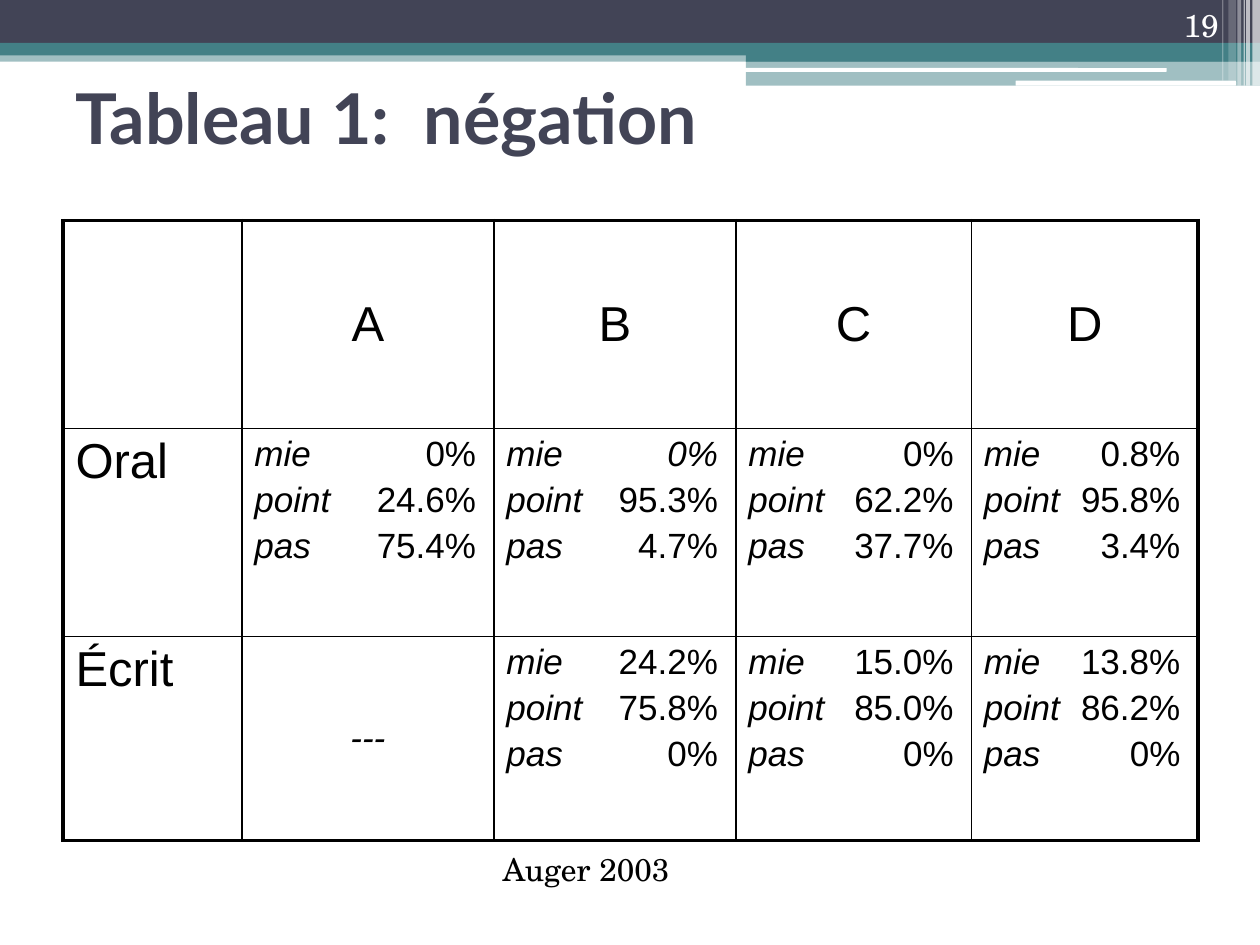
from lxml import etree
from pptx import Presentation
from pptx.dml.color import RGBColor
from pptx.enum.shapes import MSO_SHAPE
from pptx.enum.text import MSO_ANCHOR, PP_ALIGN
from pptx.oxml.ns import qn
from pptx.util import Inches, Pt

NAVY = RGBColor(0x42, 0x44, 0x56)
TEAL = RGBColor(0x43, 0x80, 0x86)
WHITE = RGBColor(0xFF, 0xFF, 0xFF)
BLACK = RGBColor(0, 0, 0)

VARIANTS = ["mie", "point", "pas"]
COLUMN_WIDTHS = [1.42, 2, 1.92, 1.87, 1.8]
ROW_HEIGHTS = [1.65, 1.65, 1.62]
SPEAKERS = ["A", "B", "C", "D"]
RESULTS = [
    ("Oral", [["0%", "24.6%", "75.4%"], ["0%", "95.3%", "4.7%"],
              ["0%", "62.2%", "37.7%"], ["0.8%", "95.8%", "3.4%"]]),
    ("Écrit", [None, ["24.2%", "75.8%", "0%"],
               ["15.0%", "85.0%", "0%"], ["13.8%", "86.2%", "0%"]]),
]
ITALIC_VALUE = ("Oral", "B", "mie")
TAB_INSET = 0.24  # from the column width to the right edge of the values


def format_run(run, size, font, color, bold=False, italic=False):
    run.font.size = Pt(size)
    run.font.name = font
    run.font.color.rgb = color
    run.font.bold = bold
    run.font.italic = italic


def add_bar(page, box, color, opacity=100, kind=MSO_SHAPE.RECTANGLE):
    bar = page.shapes.add_shape(kind, *(Inches(length) for length in box))
    bar.shadow.inherit = False
    bar.line.fill.background()
    bar.fill.solid()
    bar.fill.fore_color.rgb = color
    if opacity < 100:
        fill_color = bar.fill._xPr.find(qn("a:solidFill"))[0]
        etree.SubElement(fill_color, qn("a:alpha"), val=str(opacity * 1000))


def add_banner(page, left, top, width):
    """Bars across the top, with thin stripes at the right end."""
    right = left + width
    add_bar(page, (left, top + 0.4, width, 0.09), TEAL, 50)
    add_bar(page, (left, top, width, 0.34), NAVY)
    add_bar(page, (left, top + 0.34, width, 0.1), TEAL)
    add_bar(page, (right - 4.08, top + 0.39, 4.08, 0.1), TEAL)
    add_bar(page, (right - 4.08, top + 0.48, 4.08, 0.2), TEAL, 50)
    for offset, drop, length, height in [(4.09, 0.54, 3.35, 0.03), (1.94, 0.64, 1.75, 0.04)]:
        add_bar(page, (right - offset, top + drop, length, height), WHITE,
                kind=MSO_SHAPE.ROUNDED_RECTANGLE)
    # offset from the right edge, width, height, opacity
    for offset, thickness, height, opacity in [
            (0.06, 0.06, 0.68, 65), (0.11, 0.03, 0.68, 65), (0.13, 0.01, 0.68, 60),
            (0.18, 0.03, 0.68, 40), (0.25, 0.06, 0.64, 20), (0.3, 0.01, 0.64, 30)]:
        add_bar(page, (right - offset, top, thickness, height), WHITE, opacity)


def add_label(page, box, text, size, font, color, bold=False,
              anchor=MSO_ANCHOR.TOP, align=PP_ALIGN.LEFT):
    frame = page.shapes.add_textbox(*(Inches(length) for length in box)).text_frame
    frame.word_wrap = True
    frame.vertical_anchor = anchor
    frame.text = text
    para = frame.paragraphs[0]
    para.alignment = align
    format_run(para.runs[0], size, font, color, bold)


def set_borders(cell, widths):
    properties = cell._tc.get_or_add_tcPr()
    for index, (side, width) in enumerate(zip("LRTB", widths)):
        line = etree.Element(qn(f"a:ln{side}"), w=str(Pt(width)))
        fill = etree.SubElement(line, qn("a:solidFill"))
        etree.SubElement(fill, qn("a:srgbClr"), val=str(BLACK))
        properties.insert(index, line)


def fill_heading(cell, text, size=28, centered=False, italic=False):
    cell.text_frame.text = text
    para = cell.text_frame.paragraphs[0]
    para.space_before = Pt(size * 0.2)
    if centered:
        para.alignment = PP_ALIGN.CENTER
        cell.vertical_anchor = MSO_ANCHOR.MIDDLE
    for run in para.runs:
        format_run(run, size, "Arial", BLACK, italic=italic)


def fill_values(cell, values, column_width, italic_variant):
    """One line per variant, its value against a right tab stop."""
    frame = cell.text_frame
    for index, (variant, value) in enumerate(zip(VARIANTS, values)):
        para = frame.paragraphs[0] if index == 0 else frame.add_paragraph()
        para.space_before = Pt(4)
        tabs = etree.SubElement(para._p.get_or_add_pPr(), qn("a:tabLst"))
        etree.SubElement(tabs, qn("a:tab"), algn="r",
                         pos=str(Inches(column_width - TAB_INSET)))
        for text, italic in [(variant, True), ("\t" + value, variant == italic_variant)]:
            span = para.add_run()
            span.text = text
            format_run(span, 20, "Arial", BLACK, italic=italic)


def add_results_table(page, left, top):
    rows, columns = len(ROW_HEIGHTS), len(COLUMN_WIDTHS)
    table = page.shapes.add_table(
        rows, columns, Inches(left), Inches(top),
        Inches(sum(COLUMN_WIDTHS)), Inches(sum(ROW_HEIGHTS))).table
    table.first_row = table.horz_banding = False
    for column, width in zip(table.columns, COLUMN_WIDTHS):
        column.width = Inches(width)
    for row, height in zip(table.rows, ROW_HEIGHTS):
        row.height = Inches(height)

    # Thick outer frame, thin inner rules
    for r in range(rows):
        for c in range(columns):
            cell = table.cell(r, c)
            cell.fill.background()
            edges = (c == 0, c == columns - 1, r == 0, r == rows - 1)
            set_borders(cell, [2.25 if outer else 1 for outer in edges])

    # Headings and values
    for c, speaker in enumerate(SPEAKERS, 1):
        fill_heading(table.cell(0, c), speaker, centered=True)
    for r, (mode, groups) in enumerate(RESULTS, 1):
        fill_heading(table.cell(r, 0), mode)
        for c, (speaker, values) in enumerate(zip(SPEAKERS, groups), 1):
            cell = table.cell(r, c)
            if values is None:
                fill_heading(cell, "---", 20, centered=True, italic=True)
            else:
                italic_variant = ITALIC_VALUE[2] if (mode, speaker) == ITALIC_VALUE[:2] else None
                fill_values(cell, values, COLUMN_WIDTHS[c], italic_variant)


def main():
    deck = Presentation()
    deck.slide_width, deck.slide_height = Inches(10), Inches(7.5)
    page = deck.slides.add_slide(deck.slide_layouts[6])
    add_banner(page, 0, 0, 10)
    add_label(page, (0.5, 0.3, 9, 1.25), "Tableau 1:  négation", 40, "Lato", NAVY,
              bold=True, anchor=MSO_ANCHOR.MIDDLE)
    add_results_table(page, 0.5, 1.75)
    # Source and slide number
    add_label(page, (3.89, 6.7, 1.75, 0.4), "Auger 2003", 18, "TeX Gyre Schola", BLACK)
    add_label(page, (8.94, 0, 0.83, 0.4), "19", 18, "TeX Gyre Schola", WHITE,
              anchor=MSO_ANCHOR.BOTTOM, align=PP_ALIGN.RIGHT)
    deck.save("out.pptx")


if __name__ == "__main__":
    main()
